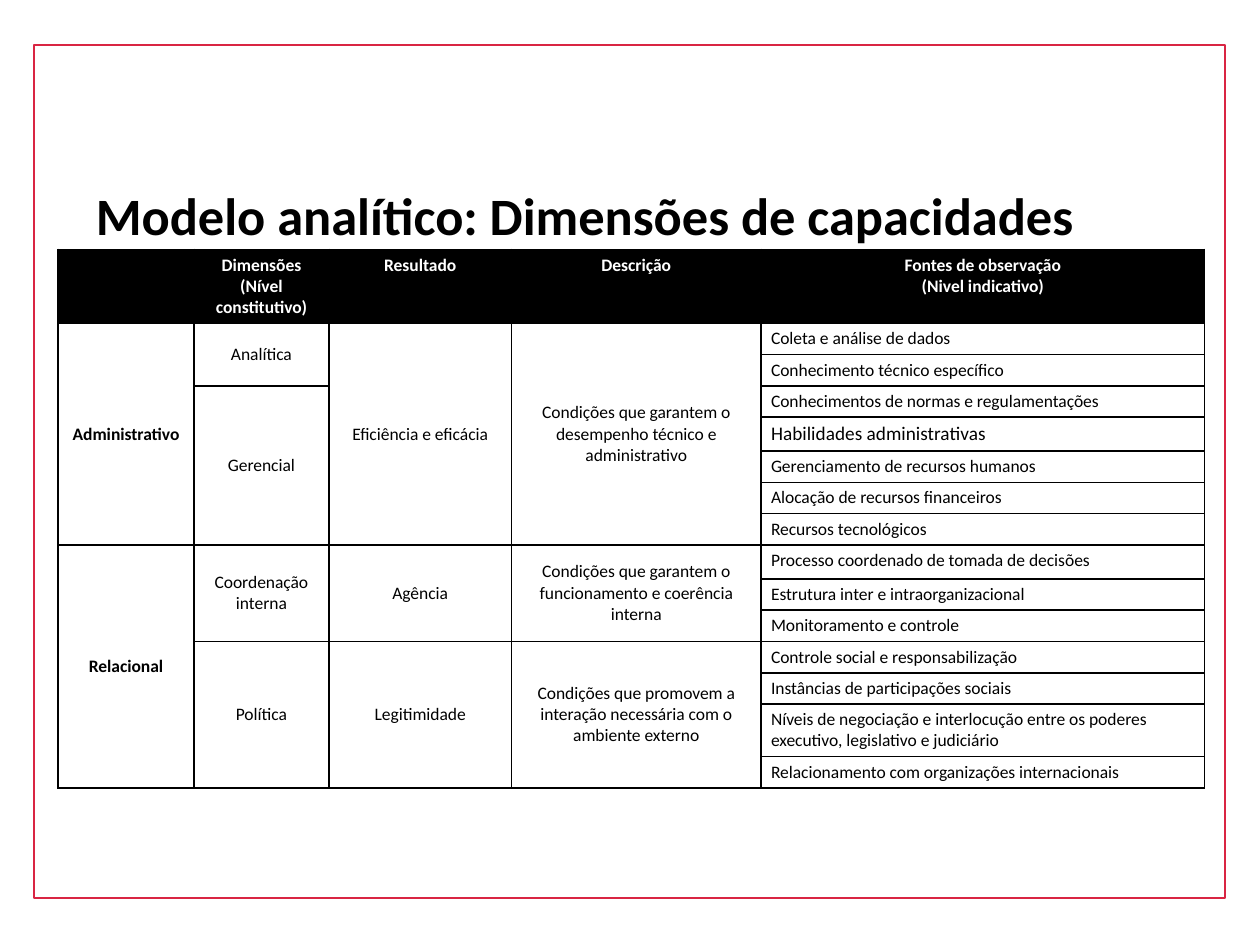
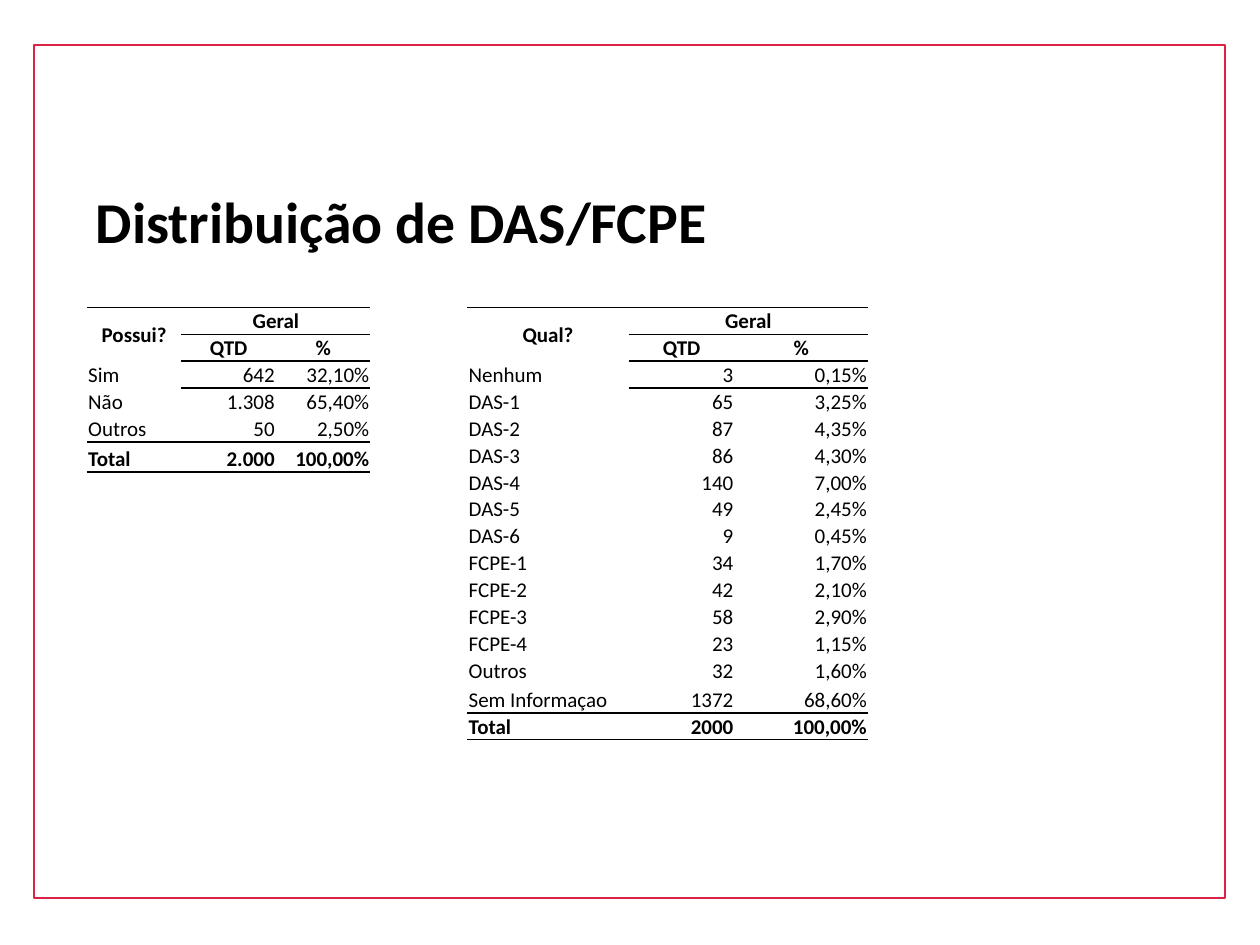
from lxml.etree import SubElement
from pptx import Presentation
from pptx.dml.color import RGBColor
from pptx.enum.shapes import MSO_SHAPE
from pptx.enum.text import MSO_ANCHOR, MSO_AUTO_SIZE, PP_ALIGN
from pptx.oxml.ns import qn
from pptx.util import Inches, Pt

HUES = {"ink": "000000", "paper": "FFFFFF", "frame": "D92543"}
FONT = "Calibri"
PLAIN = "{2D5ABB26-0587-4C30-8999-92F81FD0307C}"
LEFT, MID, RIGHT = PP_ALIGN.LEFT, PP_ALIGN.CENTER, PP_ALIGN.RIGHT

MODEL = {
    "title": "Modelo analítico: Dimensões de capacidades",
    "widths": [1.08, 1.07, 1.45, 1.98, 3.52],
    "heights": [0.56] + [0.24] * 3 + [0.25] + [0.24] * 3 + [0.27] + [0.24] * 4 + [0.4, 0.24],
    "heads": ["", "Dimensões\n(Nível constitutivo)", "Resultado", "Descrição",
              "Fontes de observação\n(Nivel indicativo)"],
    # Each column lists its cells with the rows they cover.
    "cols": [
        [("Administrativo", 7), ("Relacional", 7)],
        [("Analítica", 2), ("Gerencial", 5), ("Coordenação interna", 3), ("Política", 4)],
        [("Eficiência e eficácia", 7), ("Agência", 3), ("Legitimidade", 4)],
        [("Condições que garantem o desempenho técnico e administrativo", 7),
         ("Condições que garantem o funcionamento e coerência interna", 3),
         ("Condições que promovem a interação necessária com o ambiente externo", 4)],
        [(item, 1) for item in (
            "Coleta e análise de dados",
            "Conhecimento técnico específico",
            "Conhecimentos de normas e regulamentações",
            "Habilidades administrativas",
            "Gerenciamento de recursos humanos",
            "Alocação de recursos financeiros",
            "Recursos tecnológicos",
            "Processo coordenado de tomada de decisões",
            "Estrutura inter e intraorganizacional",
            "Monitoramento e controle",
            "Controle social e responsabilização",
            "Instâncias de participações sociais",
            "Níveis de negociação e interlocução entre os poderes "
            "executivo, legislativo e judiciário",
            "Relacionamento com organizações internacionais")],
    ],
}
LARGE = "Habilidades administrativas"

SHARES = "Distribuição de DAS/FCPE"
COUNTS = [
    {"head": "Qual?", "left": 3.71, "widths": [1.28, 0.84, 1.06],
     "heights": [0.21] * 14 + [0.23, 0.21],
     "rows": [("Nenhum", "3", "0,15%"), ("DAS-1", "65", "3,25%"),
              ("DAS-2", "87", "4,35%"), ("DAS-3", "86", "4,30%"),
              ("DAS-4", "140", "7,00%"), ("DAS-5", "49", "2,45%"),
              ("DAS-6", "9", "0,45%"), ("FCPE-1", "34", "1,70%"),
              ("FCPE-2", "42", "2,10%"), ("FCPE-3", "58", "2,90%"),
              ("FCPE-4", "23", "1,15%"), ("Outros", "32", "1,60%"),
              ("Sem Informaçao", "1372", "68,60%"), ("Total", "2000", "100,00%")]},
    {"head": "Possui?", "left": 0.69, "widths": [0.75] * 3,
     "heights": [0.21] * 5 + [0.24],
     "rows": [("Sim", "642", "32,10%"), ("Não", "1.308", "65,40%"),
              ("Outros", "50", "2,50%"), ("Total", "2.000", "100,00%")]},
]


def write(frame, text, size=10, bold=False, hue="ink", align=LEFT, space=None):
    frame.text = text
    for para in frame.paragraphs:
        para.alignment = align
        para.line_spacing = space
        font = para.font
        font.name, font.size, font.bold = FONT, Pt(size), bold
        font.color.rgb = RGBColor.from_string(HUES[hue])


def pad(box, left, top, right, low):
    """Set the four inner margins of a cell or text frame."""
    box.margin_left, box.margin_top = Inches(left), Inches(top)
    box.margin_right, box.margin_bottom = Inches(right), Inches(low)


def edge(cell, sides):
    """Draw a thin border on the sides named by the letters L, R, T, B."""
    props = cell._tc.get_or_add_tcPr()
    for side in "LRTB":
        if side in sides:
            line = SubElement(props, qn("a:ln" + side), w=str(Pt(1)))
            fill = SubElement(line, qn("a:solidFill"))
            SubElement(fill, qn("a:srgbClr"), val=HUES["ink"])


def add_page(deck, title, box, inset):
    """Add a slide with the red frame and its title."""
    page = deck.slides.add_slide(deck.slide_layouts[5])
    rim = page.shapes.add_shape(MSO_SHAPE.RECTANGLE, *map(Inches, (0.27, 0.36, 9.45, 6.77)))
    rim.shadow.inherit = False
    rim.fill.background()
    rim.line.color.rgb = RGBColor.from_string(HUES["frame"])
    rim.line.width = Pt(1)
    head = page.shapes.title
    head.left, head.top, head.width, head.height = map(Inches, box)
    rim._element.getparent().insert(2, rim._element)
    frame = head.text_frame
    frame.word_wrap = True
    frame.auto_size = MSO_AUTO_SIZE.NONE
    frame.vertical_anchor = MSO_ANCHOR.MIDDLE
    pad(frame, 0.07, inset, 0.07, inset)
    return page, frame


def add_grid(page, left, top, widths, heights):
    """Add an unstyled table with the given column and row sizes."""
    shape = page.shapes.add_table(
        len(heights), len(widths), Inches(left), Inches(top),
        Inches(sum(widths)), Inches(sum(heights)))
    grid = shape.table
    grid.first_row = grid.horz_banding = False
    grid._tbl.tblPr.find(qn("a:tableStyleId")).text = PLAIN
    for col, width in zip(grid.columns, widths):
        col.width = Inches(width)
    for row, height in zip(grid.rows, heights):
        row.height = Inches(height)
    return grid


def add_model(page):
    grid = add_grid(page, 0.46, 1.98, MODEL["widths"], MODEL["heights"])
    for cell in grid.iter_cells():
        pad(cell, 0.08, 0.04, 0.08, 0.04)
        edge(cell, "LRTB")
        cell.fill.background()
    last = len(MODEL["cols"]) - 1
    for x, (head, items) in enumerate(zip(MODEL["heads"], MODEL["cols"])):
        top = grid.cell(0, x)
        top.fill.solid()
        top.fill.fore_color.rgb = RGBColor.from_string(HUES["ink"])
        write(top.text_frame, head, bold=True, hue="paper", align=MID)
        y = 1
        for text, span in items:
            cell = grid.cell(y, x)
            if span > 1:
                cell.merge(grid.cell(y + span - 1, x))
            if x < last:
                cell.vertical_anchor = MSO_ANCHOR.MIDDLE
            write(cell.text_frame, text, size=11 if text == LARGE else 10,
                  bold=x == 0, align=LEFT if x == last else MID)
            y += span


def add_count(page, data):
    grid = add_grid(page, data["left"], 2.44, data["widths"], data["heights"])
    rows = [(data["head"], "Geral", ""), ("", "QTD", "%")] + data["rows"]
    end = len(rows) - 1
    for y, row in enumerate(rows):
        for x, text in enumerate(row):
            cell = grid.cell(y, x)
            sides = {0: "TB" if x else "T", 1: "B", 2: "B" if x else "", end: "TB"}
            pad(cell, 0.01, 0.01, 0.01, 0)
            edge(cell, sides.get(y, ""))
            cell.fill.background()
            middle = y == 1 or (y == 0 and x == 0)
            cell.vertical_anchor = MSO_ANCHOR.MIDDLE if middle else MSO_ANCHOR.BOTTOM
            write(cell.text_frame, text, size=12, bold=y < 2 or y == end,
                  align=MID if y < 2 else RIGHT if x else LEFT)
    grid.cell(0, 0).merge(grid.cell(1, 0))
    grid.cell(0, 1).merge(grid.cell(0, 2))


def main():
    deck = Presentation()
    deck.slide_width, deck.slide_height = Inches(10), Inches(7.5)
    page, head = add_page(deck, MODEL["title"], (0.69, 1.19, 9.05, 1.09), 0.04)
    write(head, MODEL["title"], size=30, bold=True, space=0.9)
    add_model(page)
    page, head = add_page(deck, SHARES, (0.69, 1.24, 8.62, 1.09), 0.07)
    write(head, SHARES, size=33, bold=True, space=0.9)
    for data in COUNTS:
        add_count(page, data)
    deck.save("out.pptx")


if __name__ == "__main__":
    main()
